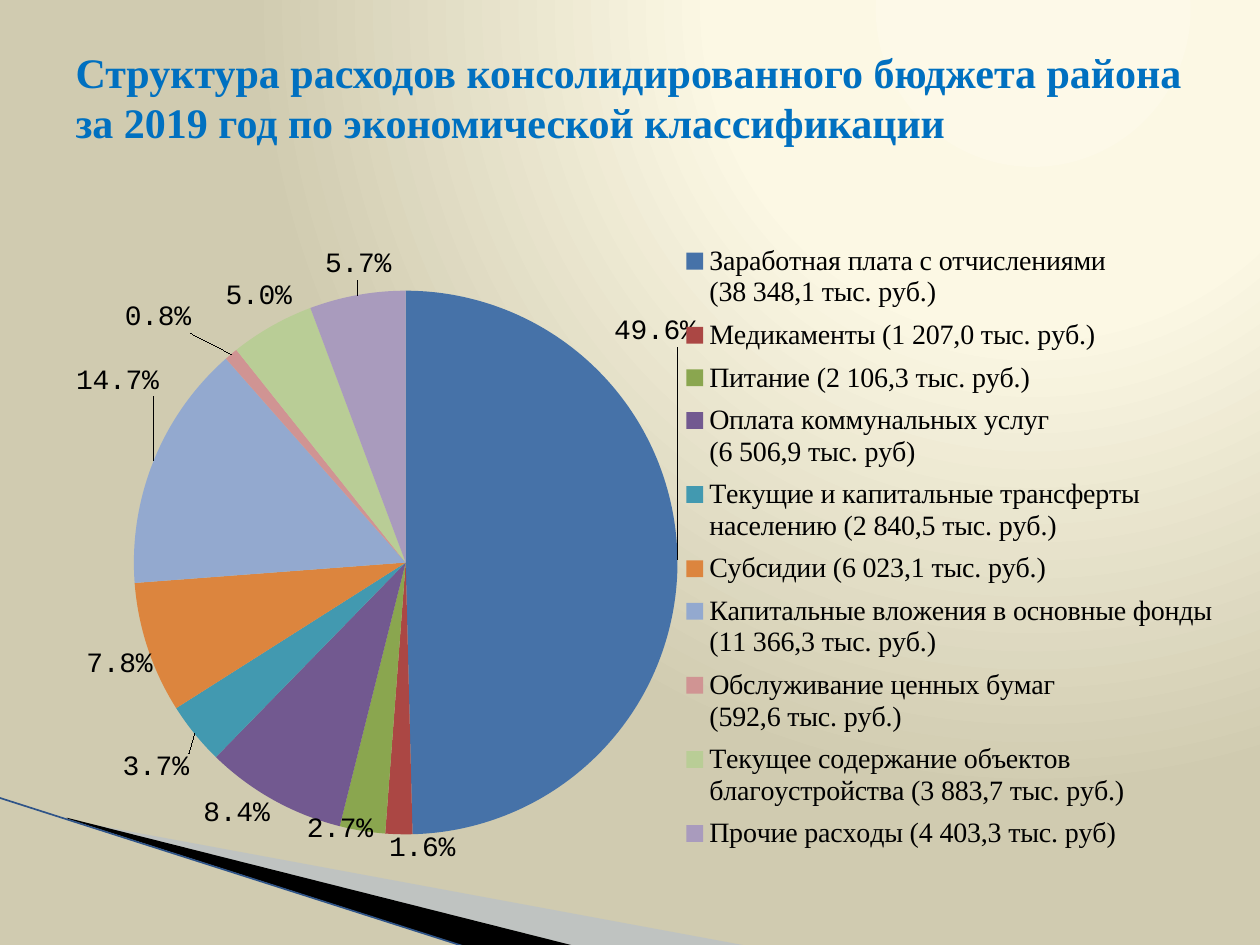
from dataclasses import dataclass

from pptx import Presentation
from pptx.chart.data import CategoryChartData
from pptx.dml.color import RGBColor
from pptx.enum.chart import XL_CHART_TYPE as ChartType
from pptx.enum.chart import XL_LABEL_POSITION as LabelPosition
from pptx.enum.chart import XL_LEGEND_POSITION as LegendPosition
from pptx.enum.shapes import MSO_CONNECTOR as Connector
from pptx.enum.text import MSO_ANCHOR as Anchor
from pptx.enum.text import PP_ALIGN as Align
from pptx.oxml import parse_xml
from pptx.oxml.ns import nsdecls, qn
from pptx.oxml.xmlchemy import OxmlElement
from pptx.util import Inches, Pt


@dataclass(frozen=True)
class Theme:
    title_color: str = "0070C0"
    text_color: str = "000000"
    ribbon_light: str = "A7B9DB"
    ribbon_dark: str = "000000"
    ribbon_line: str = "2F5488"
    background: tuple = ((0, "FDF9E8"), (40, "FCF8E4"), (100, "D0CBB0"))
    title_font: str = "Times New Roman"
    label_font: str = "Courier New"
    title_size: int = 24
    chart_size: int = 18
    label_size: int = 16


THEME = Theme()

TITLE = ("Структура расходов консолидированного бюджета района "
         "за 2019 год по экономической классификации")

EXPENSES = [
    ("Заработная плата с отчислениями\n(38 348,1 тыс. руб.)", 0.496, "4672A8", (-0.06, -0.3)),
    ("Медикаменты (1 207,0 тыс. руб.)", 0.016, "AB4744", (0.02, -0.01)),
    ("Питание (2 106,3 тыс. руб.)", 0.027, "8AA64F", (0.01, -0.03)),
    ("Оплата коммунальных услуг\n(6 506,9 тыс. руб)", 0.084, "725990", (0, -0.01)),
    ("Текущие и капитальные трансферты населению (2 840,5 тыс. руб.)", 0.037, "4299B0",
     (0, 0.02)),
    ("Субсидии (6 023,1 тыс. руб.)", 0.078, "DC853E", (0.01, 0)),
    ("Капитальные вложения в основные фонды (11 366,3 тыс. руб.)", 0.147, "93A9CF",
     (0.01, -0.08)),
    ("Обслуживание ценных бумаг\n(592,6 тыс. руб.)", 0.008, "D09493", (-0.03, -0.02)),
    ("Текущее содержание объектов благоустройства (3 883,7 тыс. руб.)", 0.05, "B9CD96",
     (0.02, -0.01)),
    ("Прочие расходы (4 403,3 тыс. руб)", 0.057, "A99BBD", (0.03, -0.01)),
]


def style_font(font, name, size, color, bold=False):
    font.name = name
    font.size = Pt(size)
    font.bold = bold
    font.color.rgb = RGBColor.from_string(color)


def set_background(page):
    page.background.fill.solid()
    properties = page.background._cSld.bg.bgPr
    stops = "".join(
        f'<a:gs pos="{percent * 1000}"><a:srgbClr val="{color}"/></a:gs>'
        for percent, color in THEME.background)
    gradient = parse_xml(
        f'<a:gradFill {nsdecls("a")} rotWithShape="1"><a:gsLst>{stops}</a:gsLst>'
        '<a:path path="circle"><a:fillToRect l="65000" b="98000"/></a:path></a:gradFill>')
    properties.replace(properties[0], gradient)


def add_ribbon(page, points, color, opacity=100):
    corners = [(Inches(x), Inches(y)) for x, y in points]
    builder = page.shapes.build_freeform(*corners[0])
    builder.add_line_segments(corners[1:], close=True)
    ribbon = builder.convert_to_shape()
    ribbon.shadow.inherit = False
    ribbon.fill.solid()
    ribbon.fill.fore_color.rgb = RGBColor.from_string(color)
    ribbon.line.fill.background()
    if opacity < 100:
        alpha = OxmlElement("a:alpha")
        alpha.set("val", str(opacity * 1000))
        ribbon.fill._xPr.solidFill[0].append(alpha)


def add_ribbon_edge(page, start, end):
    edge = page.shapes.add_connector(
        Connector.STRAIGHT, *(Inches(value) for value in start + end))
    edge.line.color.rgb = RGBColor.from_string(THEME.ribbon_line)
    edge.line.width = Pt(0.95)
    edge._element.spPr.append(OxmlElement("a:effectLst"))


def set_title(page):
    title = page.shapes.title
    title.left, title.top = Inches(0.5), Inches(0.3)
    title.width, title.height = Inches(9.15), Inches(0.93)
    frame = title.text_frame
    frame.text = TITLE
    frame.word_wrap = True
    frame.vertical_anchor = Anchor.MIDDLE
    para = frame.paragraphs[0]
    para.alignment = Align.LEFT
    style_font(para.font, THEME.title_font, THEME.title_size, THEME.title_color, True)


def manual_layout(inner=False, **settings):
    target = '<c:layoutTarget val="inner"/>' if inner else ""
    modes = '<c:xMode val="edge"/><c:yMode val="edge"/>' if "w" in settings else ""
    values = "".join(f'<c:{key} val="{value}"/>' for key, value in settings.items())
    return parse_xml(f'<c:layout {nsdecls("c")}><c:manualLayout>{target}{modes}{values}'
                     '</c:manualLayout></c:layout>')


def place_part(part, layout, after):
    for old in part.findall(layout.tag):
        part.remove(old)
    position = 0 if after is None else part.index(after) + 1
    part.insert(position, layout)


def style_label(label, element):
    style_font(label.font, THEME.label_font, THEME.label_size, THEME.text_color)
    label.position = LabelPosition.OUTSIDE_END
    element.find(qn("c:txPr")).find(qn("a:bodyPr")).set("wrap", "none")


def format_labels(labels):
    labels.show_value = True
    labels.number_format = "0.0%"
    labels.number_format_is_linked = False
    style_label(labels, labels._element)


def format_slice(point, color, offset):
    point.format.fill.solid()
    point.format.fill.fore_color.rgb = RGBColor.from_string(color)
    label = point.data_label
    label.position = LabelPosition.OUTSIDE_END
    element = label._dLbl
    style_label(label, element)
    place_part(element, manual_layout(x=offset[0], y=offset[1]), element.idx)


def add_expense_chart(page):
    data = CategoryChartData(number_format="0.0%")
    data.categories = [name for name, *_ in EXPENSES]
    data.add_series("Series 1", [share for _, share, *_ in EXPENSES])
    chart = page.shapes.add_chart(
        ChartType.PIE, Inches(0.5), Inches(1.62), Inches(9.38), Inches(5.99), data).chart
    chart.has_title = False
    style_font(chart.font, THEME.label_font, THEME.chart_size, THEME.text_color)

    series = chart.plots[0].series[0]
    format_labels(series.data_labels)
    for index, (_, _, color, offset) in enumerate(EXPENSES):
        format_slice(series.points[index], color, offset)

    chart.has_legend = True
    legend = chart.legend
    legend.position = LegendPosition.RIGHT
    legend.include_in_layout = False
    style_font(legend.font, THEME.title_font, THEME.label_size, THEME.text_color)
    place_part(legend._element, manual_layout(x=0.52, y=0.04, w=0.46, h=0.83),
               legend._element.legendPos)
    place_part(chart._chartSpace.chart.plotArea,
               manual_layout(inner=True, x=0.06, y=0.11, w=0.46, h=0.73), None)


def main():
    deck = Presentation()
    deck.slide_width, deck.slide_height = Inches(10), Inches(7.5)
    page = deck.slides.add_slide(deck.slide_layouts[5])
    set_background(page)
    add_ribbon(page, [(0.55, 6.51), (5.95, 7.51), (4.56, 7.51), (0.55, 6.5)],
               THEME.ribbon_light, opacity=40)
    add_ribbon(page, [(0.53, 6.49), (4.57, 7.51), (3.72, 7.52), (0.54, 6.5)],
               THEME.ribbon_dark)
    add_ribbon_edge(page, (-0.01, 6.33), (3.71, 7.52))
    add_expense_chart(page)
    set_title(page)
    deck.save("out.pptx")


if __name__ == "__main__":
    main()
